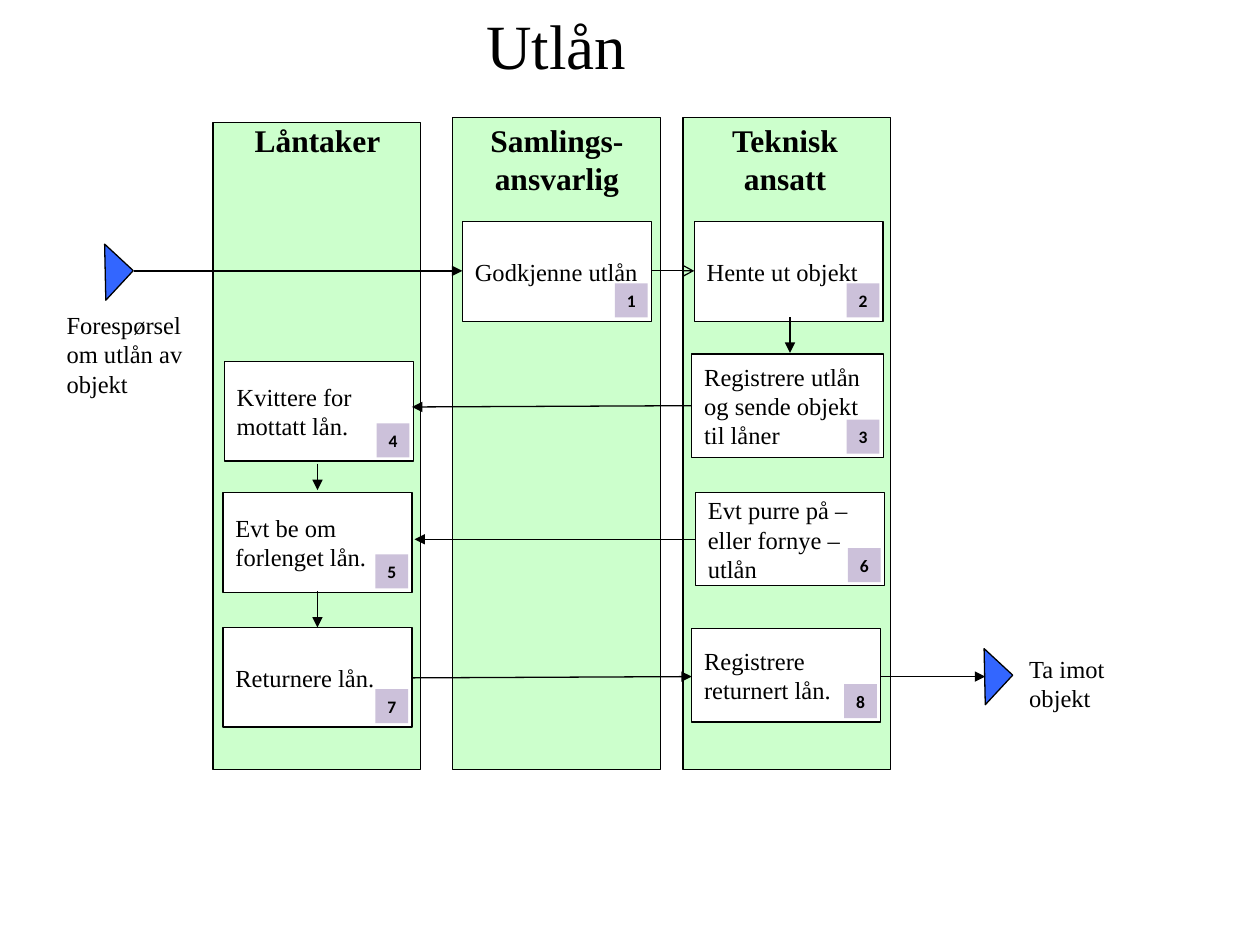
import pptx
import pptx.dml.color
import pptx.enum.shapes
import pptx.enum.text
import pptx.oxml.ns
import pptx.util
from lxml import etree

# The page is a grid of 100 columns by 75 rows
WIDTH, HEIGHT = 10, 7.5
COLUMNS, ROWS = 100, 75
SERIF, SANS = "Times New Roman", "Calibri"
BLACK, WHITE, GREEN, BLUE, LILAC = "000000", "FFFFFF", "CCFFCC", "3366FF", "CCC1DA"

LANE_WIDTH, LANE_BOTTOM = 16.5, 61.1
STEP_WIDTH = 15
BADGE_WIDTH, BADGE_HEIGHT, BADGE_GAP = 2.6, 2.7, 0.3

# Heading, left, top, heading left, heading height
LANES = [
    ("Samlings-ansvarlig", 35.9, 9.3, 36.8, 7.1),
    ("Låntaker", 16.9, 9.7, 17.8, 4),
    ("Teknisk ansatt", 54.2, 9.3, 54.9, 7.1),
]

# Text, left, top, width, height, in the order of the numbers
STEPS = [
    ("Godkjenne utlån", 36.7, 17.6, STEP_WIDTH, 7.9),
    ("Hente ut objekt", 55.1, 17.6, STEP_WIDTH, 7.9),
    ("Registrere utlån og sende objekt til låner", 54.9, 28.1, 15.2, 8.2),
    ("Kvittere for mottatt lån.", 17.8, 28.7, STEP_WIDTH, 7.9),
    ("Evt be om forlenget lån.", 17.7, 39.1, STEP_WIDTH, 7.9),
    ("Evt purre på – eller fornye – utlån", 55.2, 39.1, STEP_WIDTH, 7.4),
    ("Returnere lån.", 17.7, 49.8, STEP_WIDTH, 7.9),
    ("Registrere returnert lån.", 54.9, 49.9, STEP_WIDTH, 7.4),
]

# Start column and row, end column and row
ARROWS = [
    (10.6, 21.5, 36.7, 21.5),
    (62.7, 25.2, 62.7, 28),
    (54.9, 32.2, 32.7, 32.3),
    (25.2, 36.8, 25.2, 38.9),
    (55.2, 42.8, 32.9, 42.8),
    (25.2, 46.9, 25.2, 49.8),
    (32.7, 53.8, 54.9, 53.7),
    (69.9, 53.7, 78.2, 53.7),
]

# Triangle left and top, then the text with its left, top, width and height
EVENTS = [
    (6.8, 20, "Forespørsel om utlån av objekt", 4.3, 24.1, 13.4, 8.1),
    (76.6, 52.1, "Ta imot objekt", 80.7, 51.4, 12.8, 5.7),
]


def across(columns):
    return pptx.util.Inches(columns * WIDTH / COLUMNS)


def down(rows):
    return pptx.util.Inches(rows * HEIGHT / ROWS)


def place(left, top, width, height):
    return across(left), down(top), across(width), down(height)


def paint(target, color):
    target.solid()
    target.fore_color.rgb = pptx.dml.color.RGBColor.from_string(color)


def write(shape, text, size=14, font=SERIF, bold=False, centered=False,
          middle=False, inset=True):
    frame = shape.text_frame
    frame.word_wrap = True
    anchors = pptx.enum.text.MSO_ANCHOR
    frame.vertical_anchor = anchors.MIDDLE if middle else anchors.TOP
    if not inset:
        frame.margin_left = frame.margin_right = 0
        frame.margin_top = frame.margin_bottom = 0
    para = frame.paragraphs[0]
    aligns = pptx.enum.text.PP_ALIGN
    para.alignment = aligns.CENTER if centered else aligns.LEFT
    span = para.add_run()
    span.text = text
    span.font.name = font
    span.font.size = pptx.util.Pt(size)
    span.font.bold = bold
    paint(span.font.fill, BLACK)


def add_label(page, text, left, top, width, height, **style):
    box = page.shapes.add_textbox(*place(left, top, width, height))
    write(box, text, **style)


def add_figure(page, left, top, width, height, fill, kind="RECTANGLE", outlined=True):
    preset = getattr(pptx.enum.shapes.MSO_SHAPE, kind)
    shape = page.shapes.add_shape(preset, *place(left, top, width, height))
    shape.shadow.inherit = False
    paint(shape.fill, fill)
    if outlined:
        paint(shape.line.fill, BLACK)
        shape.line.width = pptx.util.Pt(0.75)
    else:
        shape.line.fill.background()
    return shape


def add_lane(page, heading, left, top, heading_left, heading_height):
    add_figure(page, left, top, LANE_WIDTH, LANE_BOTTOM - top, GREEN)
    add_label(page, heading, heading_left, 9.1, 14.8, heading_height,
              size=18, bold=True, centered=True)


def add_step(page, number, text, left, top, width, height):
    write(add_figure(page, left, top, width, height, WHITE), text, middle=True)
    # The number sits in the lower right corner
    badge = add_figure(page, left + width - BADGE_GAP - BADGE_WIDTH,
                       top + height - BADGE_GAP - BADGE_HEIGHT,
                       BADGE_WIDTH, BADGE_HEIGHT, LILAC, outlined=False)
    write(badge, str(number), size=10, font=SANS, bold=True,
          centered=True, middle=True, inset=False)


def add_event(page, left, top, text, *text_place):
    triangle = add_figure(page, left, top, 3.1, 3.2, BLUE, kind="RIGHT_TRIANGLE")
    triangle.rotation = 222.9
    add_label(page, text, *text_place)


def add_arrow(page, start_column, start_row, end_column, end_row,
              kind="STRAIGHT", head="triangle"):
    arrow = page.shapes.add_connector(
        getattr(pptx.enum.shapes.MSO_CONNECTOR, kind),
        across(start_column), down(start_row), across(end_column), down(end_row))
    paint(arrow.line.fill, BLACK)
    arrow.line.width = pptx.util.Pt(0.75)
    name = pptx.oxml.ns.qn
    etree.SubElement(arrow.line._get_or_add_ln(), name("a:tailEnd"), type=head)
    etree.SubElement(arrow._element.spPr, name("a:effectLst"))


def main():
    deck = pptx.Presentation()
    deck.slide_width = pptx.util.Inches(WIDTH)
    deck.slide_height = pptx.util.Inches(HEIGHT)
    page = deck.slides.add_slide(deck.slide_layouts[6])

    # Title and lanes
    add_label(page, "Utlån", 20.7, 0, 46.9, 7.1, size=36, centered=True)
    for lane in LANES:
        add_lane(page, *lane)

    # Numbered steps, with the events that start and end the flow
    for number, step in enumerate(STEPS, start=1):
        add_step(page, number, *step)
    for event in EVENTS:
        add_event(page, *event)

    # Flow
    for arrow in ARROWS:
        add_arrow(page, *arrow)
    add_arrow(page, 51.7, 21.5, 55.1, 21.5, kind="ELBOW", head="arrow")

    deck.save("out.pptx")


if __name__ == "__main__":
    main()
